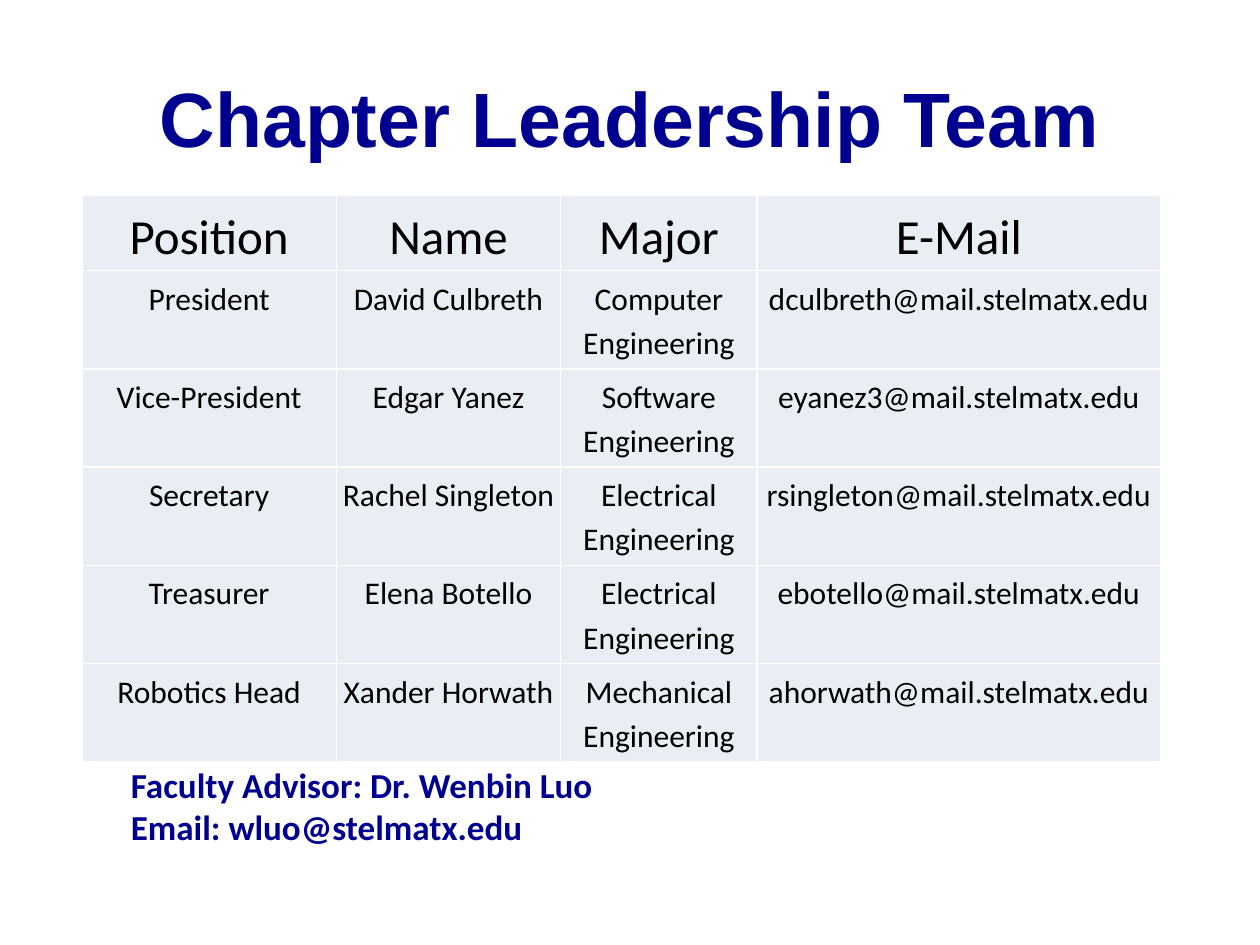
import pptx
import pptx.util
import pptx.dml.color
import pptx.enum.text
import pptx.oxml
import pptx.oxml.ns

Inches = pptx.util.Inches
Pt = pptx.util.Pt
RGBColor = pptx.dml.color.RGBColor
Align = pptx.enum.text.PP_ALIGN
Anchor = pptx.enum.text.MSO_ANCHOR

NAVY = RGBColor(0x00, 0x00, 0x90)
BLACK = RGBColor(0x00, 0x00, 0x00)
WHITE = RGBColor(0xFF, 0xFF, 0xFF)
PALE = RGBColor(0xE9, 0xED, 0xF4)

MAIL = "@mail.stelmatx.edu"
HEADS = ("Position", "Name", "Major", "E-Mail")
TEAM = (
    ("President", "David Culbreth", "Computer", "dculbreth"),
    ("Vice-President", "Edgar Yanez", "Software", "eyanez3"),
    ("Secretary", "Rachel Singleton", "Electrical", "rsingleton"),
    ("Treasurer", "Elena Botello", "Electrical", "ebotello"),
    ("Robotics Head", "Xander Horwath", "Mechanical", "ahorwath"),
)
COLS = (2.02, 1.78, 1.56, 3.2)
HEAD = 0.42
ROW = 0.78


def style(frame, size, face, color, bold=False, align=Align.LEFT, gap=1.0):
    for para in frame.paragraphs:
        para.alignment = align
        para.line_spacing = gap
        for run in para.runs:
            font = run.font
            font.size = Pt(size)
            font.name = face
            font.bold = bold
            font.color.rgb = color


def add_text(slide, box, text, anchor=Anchor.TOP, **look):
    frame = slide.shapes.add_textbox(*map(Inches, box)).text_frame
    frame.word_wrap = True
    frame.vertical_anchor = anchor
    frame.text = text
    style(frame, **look)


def add_edges(cell):
    props = cell._tc.get_or_add_tcPr()
    for n, side in enumerate(("lnL", "lnR", "lnT", "lnB")):
        line = pptx.oxml.parse_xml(
            f'<a:{side} {pptx.oxml.ns.nsdecls("a")} w="{Pt(1)}">'
            f'<a:solidFill><a:srgbClr val="{WHITE}"/></a:solidFill></a:{side}>'
        )
        props.insert(n, line)


def fill_cell(cell, text, size):
    cell.margin_left = cell.margin_right = Inches(0.03)
    cell.margin_top = cell.margin_bottom = Inches(0.03)
    cell.fill.solid()
    cell.fill.fore_color.rgb = PALE
    add_edges(cell)
    cell.text_frame.text = text
    style(cell.text_frame, size, "Calibri", BLACK, align=Align.CENTER, gap=1.15)


def add_grid(slide, left, top):
    rows = [HEADS] + [
        (post, name, f"{field} Engineering", user + MAIL)
        for post, name, field, user in TEAM
    ]
    high = HEAD + ROW * len(TEAM)
    box = map(Inches, (left, top, sum(COLS), high))
    table = slide.shapes.add_table(len(rows), len(COLS), *box).table
    for col, wide in zip(table.columns, COLS):
        col.width = Inches(wide)
    for r, row in enumerate(rows):
        table.rows[r].height = Inches(ROW if r else HEAD)
        for c, text in enumerate(row):
            fill_cell(table.cell(r, c), text, 18 if r else 28)


def main():
    deck = pptx.Presentation()
    deck.slide_width = Inches(10)
    deck.slide_height = Inches(7.5)
    slide = deck.slides.add_slide(deck.slide_layouts[6])
    add_text(slide, (0.5, 0.3, 9, 1.25), "Chapter Leadership Team",
             anchor=Anchor.MIDDLE, size=44, face="Arial", color=NAVY,
             bold=True, align=Align.CENTER)
    add_text(slide, (0.94, 6.01, 7.89, 0.77),
             "Faculty Advisor: Dr. Wenbin Luo\nEmail: wluo@stelmatx.edu",
             size=20, face="Calibri", color=NAVY, bold=True)
    add_grid(slide, 0.65, 1.55)
    deck.save("out.pptx")


if __name__ == "__main__":
    main()
